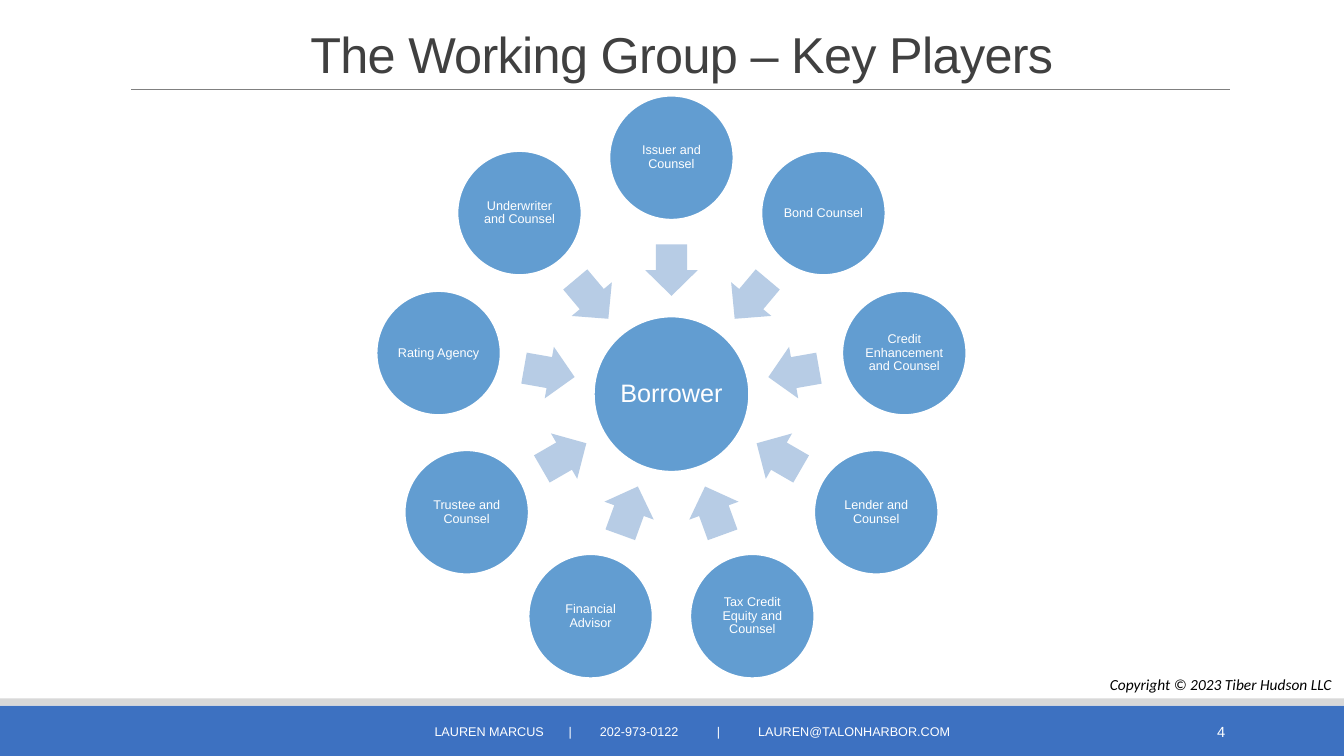
from dataclasses import dataclass
from math import cos, radians, sin
from typing import Optional

from lxml import etree
from pptx import Presentation
from pptx.dml.color import RGBColor
from pptx.enum import shapes, text
from pptx.oxml import ns
from pptx.util import Inches, Pt


@dataclass(frozen=True)
class Theme:
    font: str = "Arial"
    copyright_font: str = "Calibri"
    white: str = "FFFFFF"
    black: str = "000000"
    title: str = "404040"
    rule: str = "808080"
    footer: str = "3D71C1"
    footer_edge: str = "D8D8D8"
    circle: str = "629DD1"
    arrow: str = "B7CCE5"
    title_size: float = 36
    hub_size: float = 18
    player_size: float = 9
    footer_size: float = 9
    number_size: float = 10.5
    copyright_size: float = 11


@dataclass(frozen=True)
class Box:
    left: float
    top: float
    width: float
    height: float

    def lengths(self) -> list:
        return [Inches(v) for v in (self.left, self.top, self.width, self.height)]


@dataclass(frozen=True)
class TextStyle:
    size: float
    color: str
    font: str = "Arial"
    align: text.PP_ALIGN = text.PP_ALIGN.CENTER
    line_spacing: Optional[float] = None
    italic: bool = False


@dataclass(frozen=True)
class Label:
    words: str
    box: Box
    style: TextStyle
    wrap: bool = True
    anchor: text.MSO_ANCHOR = text.MSO_ANCHOR.MIDDLE


THEME = Theme()
HUB_X, HUB_Y = 6.66, 3.91
HUB_DIAMETER, PLAYER_DIAMETER = 1.54, 1.23
PLAYER_ORBIT, ARROW_ORBIT = 2.345, 1.23
ARROW_LENGTH, ARROW_WIDTH = 0.51, 0.52
FOOTER_INDENT = 0.28
FOOTER_TABS = (1.33, 1.64, 2.8, 3.21)
PLAYERS = (
    "Issuer and Counsel",
    "Bond Counsel",
    "Credit Enhancement and Counsel",
    "Lender and Counsel",
    "Tax Credit Equity and Counsel",
    "Financial Advisor",
    "Trustee and Counsel",
    "Rating Agency",
    "Underwriter and Counsel",
)
TITLE = Label("The Working Group – Key Players", Box(1.26, 0.32, 11, 0.52),
              TextStyle(THEME.title_size, THEME.title, line_spacing=0.85))
NUMBER = Label("4", Box(10.82, 7.06, 1.43, 0.4),
               TextStyle(THEME.number_size, THEME.white, align=text.PP_ALIGN.RIGHT))
COPYRIGHT = Label("Copyright © 2023 Tiber Hudson LLC", Box(10.91, 6.65, 2.42, 0.29),
                  TextStyle(THEME.copyright_size, THEME.black, THEME.copyright_font,
                            text.PP_ALIGN.LEFT, italic=True),
                  wrap=False, anchor=text.MSO_ANCHOR.TOP)
CONTACT = Label("LAUREN MARCUS\t|\t202-973-0122\t|\tLAUREN@TALONHARBOR.COM",
                Box(4.03, 7.06, 5.63, 0.4),
                TextStyle(THEME.footer_size, THEME.white, align=text.PP_ALIGN.LEFT))


def write_text(frame, words: str, style: TextStyle) -> None:
    frame.text = words
    paragraph = frame.paragraphs[0]
    paragraph.alignment = style.align
    if style.line_spacing:
        paragraph.line_spacing = style.line_spacing
    for run in paragraph.runs:
        run.font.name = style.font
        run.font.size = Pt(style.size)
        run.font.italic = style.italic
        run.font.color.rgb = RGBColor.from_string(style.color)


def add_label(slide, label: Label):
    shape = slide.shapes.add_textbox(*label.box.lengths())
    shape.text_frame.word_wrap = label.wrap
    shape.text_frame.vertical_anchor = label.anchor
    write_text(shape.text_frame, label.words, label.style)
    return shape


def add_filled(slide, kind: shapes.MSO_SHAPE, box: Box, color: str):
    shape = slide.shapes.add_shape(kind, *box.lengths())
    shape.shadow.inherit = False
    shape.fill.solid()
    shape.fill.fore_color.rgb = RGBColor.from_string(color)
    shape.line.fill.background()
    return shape


def centred_box(x: float, y: float, width: float, height: float) -> Box:
    return Box(x - width / 2, y - height / 2, width, height)


def orbit_point(angle: float, radius: float) -> tuple[float, float]:
    return HUB_X + radius * sin(radians(angle)), HUB_Y - radius * cos(radians(angle))


def add_circle(slide, words: str, centre: tuple[float, float], diameter: float,
               size: float, margin: float) -> None:
    circle = add_filled(slide, shapes.MSO_SHAPE.OVAL,
                        centred_box(*centre, diameter, diameter), THEME.circle)
    circle.line.color.rgb = RGBColor.from_string(THEME.white)
    circle.line.width = Pt(1.25)
    frame = circle.text_frame
    frame.word_wrap = True
    frame.vertical_anchor = text.MSO_ANCHOR.MIDDLE
    frame.margin_left = frame.margin_right = Inches(margin)
    frame.margin_top = frame.margin_bottom = Inches(margin)
    write_text(frame, words, TextStyle(size, THEME.white, line_spacing=0.9))


def add_arrow(slide, angle: float) -> None:
    box = centred_box(*orbit_point(angle, ARROW_ORBIT), ARROW_LENGTH, ARROW_WIDTH)
    arrow = add_filled(slide, shapes.MSO_SHAPE.RIGHT_ARROW, box, THEME.arrow)
    arrow.adjustments[0] = 0.6
    arrow.adjustments[1] = 0.5
    arrow.rotation = (angle + 90) % 360


def add_frame(slide) -> None:
    add_filled(slide, shapes.MSO_SHAPE.RECTANGLE, Box(0, 7, 13.33, 0.5), THEME.footer)
    add_filled(slide, shapes.MSO_SHAPE.RECTANGLE, Box(0, 6.93, 13.33, 0.07), THEME.footer_edge)
    rule = slide.shapes.add_connector(shapes.MSO_CONNECTOR.STRAIGHT, Inches(1.3),
                                      Inches(0.89), Inches(12.2), Inches(0.89))
    rule.line.color.rgb = RGBColor.from_string(THEME.rule)
    rule.line.width = Pt(0.5)
    etree.SubElement(rule._element.spPr, ns.qn("a:effectLst"))


def add_title(slide) -> None:
    title = add_label(slide, TITLE)
    run = title.text_frame.paragraphs[0].runs[0]
    run.font._element.set("spc", "-50")


def add_contact(slide) -> None:
    contact = add_label(slide, CONTACT)
    contact.text_frame.margin_left = Inches(FOOTER_INDENT)
    properties = contact.text_frame.paragraphs[0]._p.get_or_add_pPr()
    tab_list = etree.SubElement(properties, ns.qn("a:tabLst"))
    for position in FOOTER_TABS:
        etree.SubElement(tab_list, ns.qn("a:tab"), pos=str(Inches(position)), algn="l")


def add_working_group(slide) -> None:
    add_circle(slide, "Borrower", (HUB_X, HUB_Y), HUB_DIAMETER, THEME.hub_size, 0.03)
    for index, player in enumerate(PLAYERS):
        angle = index * 360 / len(PLAYERS)
        add_arrow(slide, angle)
        add_circle(slide, player, orbit_point(angle, PLAYER_ORBIT), PLAYER_DIAMETER,
                   THEME.player_size, 0.01)


def main() -> None:
    presentation = Presentation()
    presentation.slide_width = Inches(13.33)
    presentation.slide_height = Inches(7.5)
    slide = presentation.slides.add_slide(presentation.slide_layouts[6])
    add_frame(slide)
    add_title(slide)
    add_label(slide, NUMBER)
    add_working_group(slide)
    add_label(slide, COPYRIGHT)
    add_contact(slide)
    presentation.save("out.pptx")


if __name__ == "__main__":
    main()
